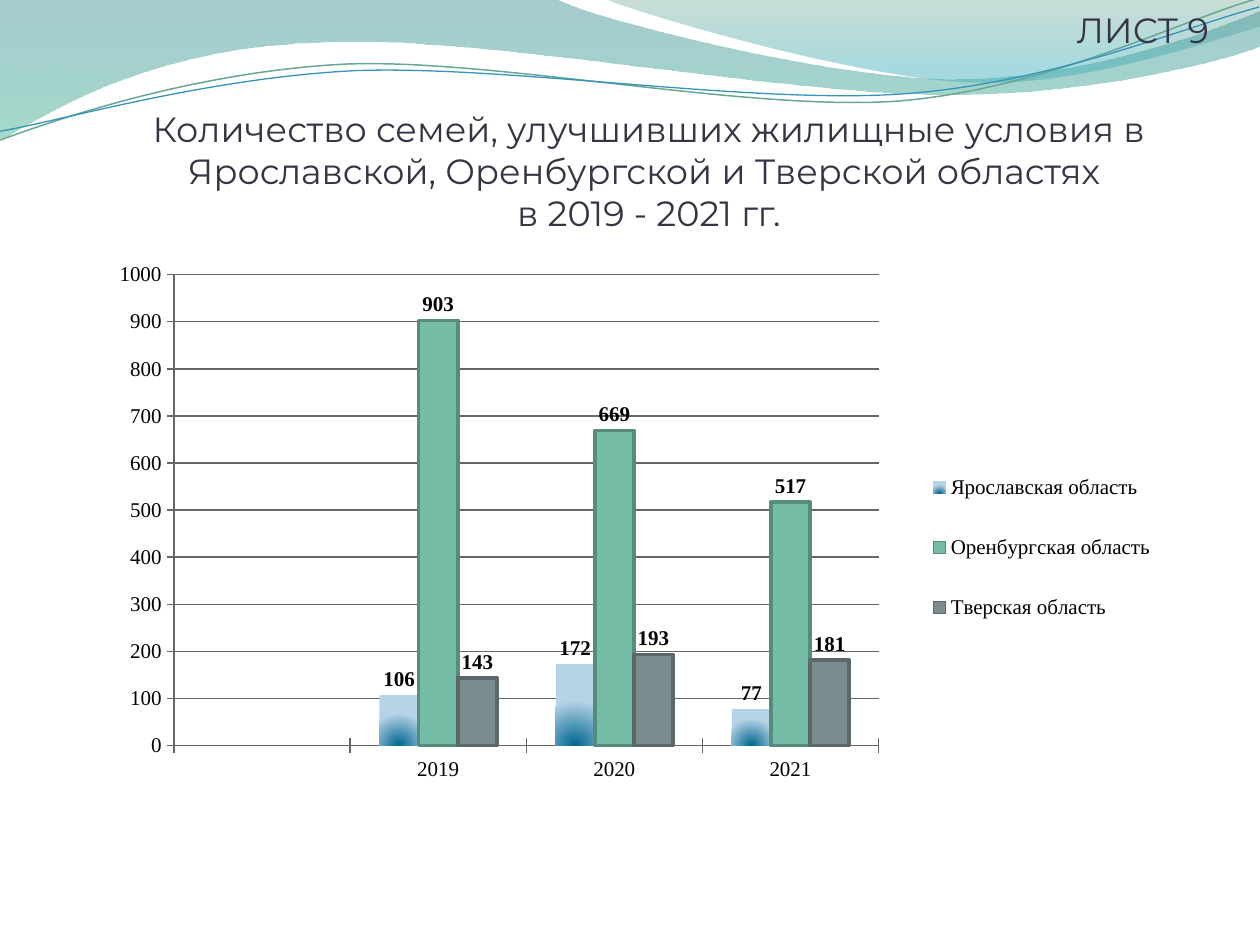
from lxml import etree
from pptx import Presentation, util as u
from pptx.chart.data import CategoryChartData
from pptx.dml.color import RGBColor
from pptx.enum import chart as ch, text
from pptx.oxml.ns import qn

INK = RGBColor(0x37, 0x35, 0x45)
BLACK = RGBColor(0, 0, 0)
GRID = RGBColor(0x66, 0x66, 0x66)
TEAL = RGBColor(0x39, 0x8D, 0x96)
MINT = RGBColor(0x58, 0xBD, 0x9F)
MOSS = RGBColor(0x4F, 0x94, 0x7F)
AQUA = RGBColor(0x3B, 0xAF, 0xBC)
SAGE = RGBColor(0x67, 0xA7, 0x93)
BLUE = RGBColor(0x34, 0x94, 0xBA)
DEEP = RGBColor(0x00, 0x66, 0x90)
PALE = RGBColor(0xB5, 0xD4, 0xE8)
GREEN = RGBColor(0x75, 0xBD, 0xA7)
PINE = RGBColor(0x57, 0x8C, 0x7C)
GREY = RGBColor(0x7A, 0x8C, 0x8E)
SLATE = RGBColor(0x5A, 0x68, 0x69)

BANDS = [
    ([(0, 0), (317, -1), (343, 12, 478, 45, 546, 45),
      (614, 45, 690, 19, 720, 6), (721, 26),
      (708, 32, 626, 55, 537, 54), (446, 54, 275, 20, 185, 24),
      (93, 26, 33, 60, -1, 81), (0, 0)],
     [(0, TEAL, 45), (100, MINT, 55)]),
    ([(345, -1), (366, 8, 491, 45, 554, 47),
      (616, 50, 692, 23, 720, 15), (720, 0), (345, -1)],
     [(0, MOSS, 30), (80, AQUA, 45)]),
]
WAVES = [
    ([(-1, 63), (34, 52, 114, 29, 199, 29), (284, 30, 426, 67, 512, 65),
      (599, 62, 676, 26, 721, 16)], SAGE, 0.85),
    ([(-1, 58), (33, 54, 118, 33, 204, 33), (290, 34, 429, 63, 515, 61),
      (601, 59, 679, 30, 721, 21)], BLUE, 0.75),
]
YEARS = ["", "2019", "2020", "2021"]
ROWS = [
    ("Ярославская область", [None, 106, 172, 77]),
    ("Оренбургская область", [None, 903, 669, 517]),
    ("Тверская область", [None, 143, 193, 181]),
]


def bend(shape, moves):
    track = next(shape._element.iter(qn("a:path")))
    nodes = iter(track.findall(qn("a:lnTo")))
    for move in moves[1:]:
        group = [next(nodes) for _ in range(len(move) // 2)]
        if len(group) == 3:
            arc = etree.Element(qn("a:cubicBezTo"))
            group[0].addprevious(arc)
            for node in group:
                arc.append(node[0])
                track.remove(node)


def curve(slide, moves, close):
    pts = [(u.Pt(m[i]), u.Pt(m[i + 1]))
           for m in moves for i in range(0, len(m), 2)]
    pen = slide.shapes.build_freeform(*pts[0], scale=1.0)
    pen.add_line_segments(pts[1:], close=close)
    shape = pen.convert_to_shape()
    shape.shadow.inherit = False
    bend(shape, moves)
    return shape


def blend(fill, stops):
    fill.gradient()
    for stop, (pos, color, alpha) in zip(fill.gradient_stops, stops):
        stop.position = pos / 100
        stop.color.rgb = color
        tint = stop._gs[0]
        etree.SubElement(tint, qn("a:alpha"), val=str(alpha * 1000))


def band(slide, moves, stops):
    shape = curve(slide, moves, True)
    blend(shape.fill, stops)
    shape.fill.gradient_angle = 270
    shape.line.fill.background()


def wave(slide, moves, color, width):
    shape = curve(slide, moves, False)
    shape.rotation = 357.3
    shape.fill.background()
    shape.line.color.rgb = color
    shape.line.width = u.Pt(width)


def write(shape, words, box):
    shape.left, shape.top, shape.width, shape.height = map(u.Pt, box)
    frame = shape.text_frame
    frame.text = words
    frame.word_wrap = True
    frame.auto_size = text.MSO_AUTO_SIZE.NONE
    frame.vertical_anchor = text.MSO_ANCHOR.BOTTOM
    frame.margin_left = frame.margin_right = frame.margin_bottom = 0
    frame.margin_top = u.Pt(3.6)
    para = frame.paragraphs[0]
    para.alignment = text.PP_ALIGN.CENTER
    para.font.name = "Montserrat"
    para.font.size = u.Pt(20)
    para.font.color.rgb = INK


def place(node, index, box, inner=False):
    for old in node.findall(qn("c:layout")):
        node.remove(old)
    layout = etree.Element(qn("c:layout"))
    manual = etree.SubElement(layout, qn("c:manualLayout"))
    pairs = [("layoutTarget", "inner")] if inner else []
    pairs += [("xMode", "edge"), ("yMode", "edge")]
    pairs += zip("xywh", (str(part / 100) for part in box))
    for tag, val in pairs:
        etree.SubElement(manual, qn("c:" + tag), val=val)
    node.insert(index, layout)


def glow(fill):
    blend(fill, [(0, DEEP, 100), (100, PALE, 100)])
    grad = fill._xPr.find(qn("a:gradFill"))
    lin = grad.find(qn("a:lin"))
    ring = etree.Element(qn("a:path"))
    ring.set("path", "circle")
    etree.SubElement(ring, qn("a:fillToRect"),
                     l="50000", t="100000", r="50000", b="0")
    grad.replace(lin, ring)


def style(axis):
    axis.major_tick_mark = ch.XL_TICK_MARK.CROSS
    axis.format.line.color.rgb = GRID
    axis.format.line.width = u.Pt(0.75)


def graph(slide, box):
    data = CategoryChartData()
    data.categories = YEARS
    for name, vals in ROWS:
        data.add_series(name, vals)
    chart = slide.shapes.add_chart(
        ch.XL_CHART_TYPE.COLUMN_CLUSTERED, *map(u.Pt, box), data).chart
    chart.has_title = False
    chart.font.name = "Times New Roman"
    chart.font.size = u.Pt(12)
    chart.font.color.rgb = BLACK

    style(chart.category_axis)
    scale = chart.value_axis
    style(scale)
    scale.has_major_gridlines = True
    scale.major_gridlines.format.line.color.rgb = GRID
    scale.major_gridlines.format.line.width = u.Pt(0.75)

    plot = chart.plots[0]
    plot.gap_width, plot.overlap, plot.vary_by_categories = 150, 0, False
    first, *rest = plot.series
    glow(first.format.fill)
    for row, fill, edge in zip(rest, (GREEN, GREY), (PINE, SLATE)):
        row.format.fill.solid()
        row.format.fill.fore_color.rgb = fill
        row.format.line.color.rgb = edge
        row.format.line.width = u.Pt(2)
    for row in plot.series:
        row.invert_if_negative = False
        tags = row.data_labels
        tags.show_value = True
        tags.position = ch.XL_LABEL_POSITION.OUTSIDE_END
        tags.font.bold = True
        tags.font.size = u.Pt(12)

    chart.has_legend = True
    key = chart.legend
    key.position = ch.XL_LEGEND_POSITION.RIGHT
    key.include_in_layout = False
    place(key._element, 1, (75.7, 34.3, 22, 40.4))
    area = chart._chartSpace.chart.plotArea
    place(area, 0, (7.9, 3.8, 64, 87.5), True)


def main():
    deck = Presentation()
    deck.slide_width, deck.slide_height = u.Pt(720), u.Pt(540)
    slide = deck.slides.add_slide(deck.slide_layouts[5])
    for item in BANDS:
        band(slide, *item)
    for item in WAVES:
        wave(slide, *item)
    title = slide.shapes.title
    slide.shapes._spTree.append(title._element)
    write(title, "Количество семей, улучшивших жилищные условия в Ярославской, "
          "Оренбургской и Тверской областях \vв 2019 - 2021 гг.",
          (46.8, 43.2, 648, 90))
    graph(slide, (49.7, 145.4, 629.3, 307.4))
    page = slide.shapes.add_textbox(0, 0, 0, 0)
    write(page, "ЛИСТ 9", (588.2, 0.7, 129.6, 28))
    deck.save("out.pptx")


if __name__ == "__main__":
    main()
